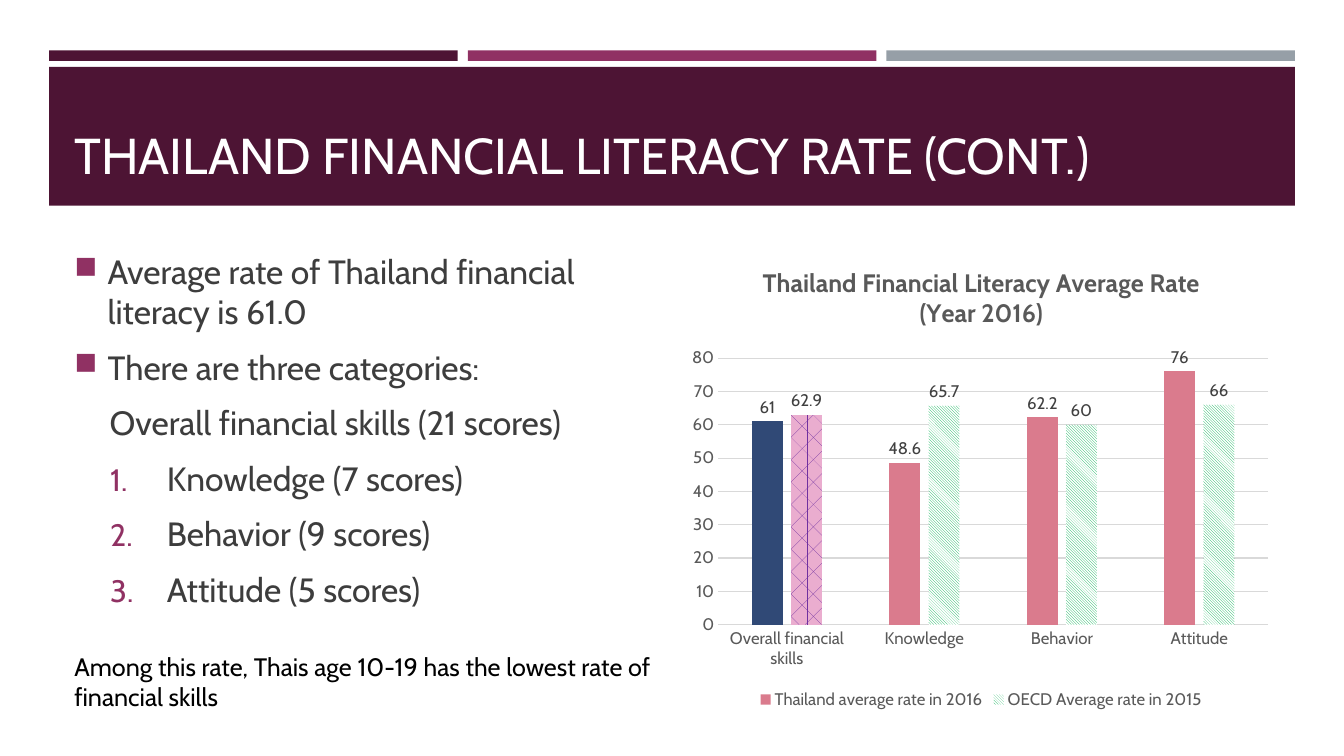
import pptx
import pptx.chart.data
import pptx.dml.color
import pptx.enum.chart
import pptx.enum.dml
import pptx.enum.shapes
import pptx.enum.text
import pptx.oxml
import pptx.oxml.ns
import pptx.util
from pptx.util import Pt

FONT = "Cabin"
PLUM, MAGENTA, GREY = "4D1434", "903163", "969FA7"
CHART_GREY, RULE_GREY = "595959", "D9D9D9"


def color(value):
    return pptx.dml.color.RGBColor.from_string(value)


def format_font(font, size, value, bold=False):
    font.name = FONT
    font.size = Pt(size)
    font.bold = bold
    font.color.rgb = color(value)


def format_runs(paragraph, size, value):
    for run in paragraph.runs:
        format_font(run.font, size, value)


def add_bar(slide, left, top, width, height, fill):
    shape = slide.shapes.add_shape(
        pptx.enum.shapes.MSO_SHAPE.RECTANGLE, Pt(left), Pt(top), Pt(width), Pt(height))
    shape.shadow.inherit = False
    shape.fill.solid()
    shape.fill.fore_color.rgb = color(fill)
    shape.line.fill.background()


def add_text_box(slide, left, top, width, height):
    text_frame = slide.shapes.add_textbox(Pt(left), Pt(top), Pt(width), Pt(height)).text_frame
    text_frame.word_wrap = True
    return text_frame


def add_header(slide, left, top, width):
    # Three thin stripes above the title band
    gap = 7.2
    stripe = (width - 2 * gap) / 3
    for index, fill in enumerate((PLUM, MAGENTA, GREY)):
        add_bar(slide, left + index * (stripe + gap), top, stripe, 7.5, fill)
    add_bar(slide, left, top + 11.8, width, 99.2, PLUM)

    # Title, drawn over the band
    title = slide.shapes.title
    title.left, title.top = Pt(left + 10.8), Pt(top + 21.6)
    title.width, title.height = Pt(width - 21.6), Pt(77.8)
    slide.shapes._spTree.append(title._element)
    text_frame = title.text_frame
    text_frame.text = "THAILAND FINANCIAL LITERACY RATE (CONT.)"
    text_frame.vertical_anchor = pptx.enum.text.MSO_ANCHOR.BOTTOM
    paragraph = text_frame.paragraphs[0]
    paragraph.alignment = pptx.enum.text.PP_ALIGN.LEFT
    format_runs(paragraph, 36, "FFFFFF")


def set_bullet(paragraph, margin, indent, bullet):
    properties = paragraph._p.get_or_add_pPr()
    properties.set("marL", str(Pt(margin)))
    properties.set("indent", str(Pt(indent)))
    if bullet is None:
        parts = ["<a:buNone {}/>"]
    else:
        parts = ['<a:buClr {}><a:srgbClr val="' + MAGENTA + '"/></a:buClr>',
                 '<a:buSzPct {} val="92000"/>', bullet]
    for part in parts:
        properties.append(pptx.oxml.parse_xml(part.format(pptx.oxml.ns.nsdecls("a"))))


def add_points(slide, left, top, width, height):
    square = (23.8, -23.8, '<a:buChar {} char="■"/>')
    plain = (25.2, 0, None)
    number = (66.2, -40.5, '<a:buAutoNum {} type="arabicPeriod"/>')
    points = [
        ("Average rate of Thailand financial literacy is 61.0", square),
        ("There are three categories:", square),
        ("Overall financial skills (21 scores)", plain),
        ("Knowledge (7 scores)", number),
        ("Behavior (9 scores)", number),
        ("Attitude (5 scores)", number),
    ]
    text_frame = add_text_box(slide, left, top, width, height)
    for index, (text, style) in enumerate(points):
        paragraph = text_frame.add_paragraph() if index else text_frame.paragraphs[0]
        paragraph.text = text
        paragraph.space_before = Pt(4.8 if index else 0)
        paragraph.space_after = Pt(6)
        set_bullet(paragraph, *style)
        format_runs(paragraph, 24, "3D3D3D")


def add_remark(slide, left, top, width, height):
    text_frame = add_text_box(slide, left, top, width, height)
    text_frame.text = "Among this rate, Thais age 10-19 has the lowest rate of financial skills"
    format_runs(text_frame.paragraphs[0], 18, "000000")


def fill_solid(fill, value):
    fill.solid()
    fill.fore_color.rgb = color(value)


def fill_pattern(fill, pattern, front, back):
    fill.patterned()
    fill.pattern = pattern
    fill.fore_color.rgb = color(front)
    fill.back_color.rgb = color(back)


def place_plot(chart, left, top, width, height):
    plot_area = chart._chartSpace.chart.plotArea
    for layout in plot_area.findall(pptx.oxml.ns.qn("c:layout")):
        plot_area.remove(layout)
    values = {"layoutTarget": "inner", "xMode": "edge", "yMode": "edge",
              "x": left, "y": top, "w": width, "h": height}
    inner = "".join(f'<c:{name} val="{value}"/>' for name, value in values.items())
    plot_area.insert(0, pptx.oxml.parse_xml(
        f'<c:layout {pptx.oxml.ns.nsdecls("c")}>'
        f'<c:manualLayout>{inner}</c:manualLayout></c:layout>'))


def add_rate_chart(slide, left, top, width, height):
    data = pptx.chart.data.CategoryChartData()
    data.categories = ["Overall financial skills", "Knowledge", "Behavior", "Attitude"]
    data.add_series("Thailand average rate in 2016", (61, 48.6, 62.2, 76))
    data.add_series("OECD Average rate in 2015", (62.9, 65.7, 60, 66))
    chart = slide.shapes.add_chart(
        pptx.enum.chart.XL_CHART_TYPE.COLUMN_CLUSTERED,
        Pt(left), Pt(top), Pt(width), Pt(height), data).chart
    format_font(chart.font, 10, "000000")
    place_plot(chart, 0.06, 0.24, 0.92, 0.57)

    # Title and legend
    chart.has_title = True
    title_frame = chart.chart_title.text_frame
    title_frame.text = "Thailand Financial Literacy Average Rate (Year 2016)"
    format_font(title_frame.paragraphs[0].runs[0].font, 18, CHART_GREY, bold=True)
    chart.has_legend = True
    chart.legend.position = pptx.enum.chart.XL_LEGEND_POSITION.BOTTOM
    chart.legend.include_in_layout = False
    format_font(chart.legend.font, 12, CHART_GREY)

    # Axes
    for axis in (chart.category_axis, chart.value_axis):
        axis.major_tick_mark = pptx.enum.chart.XL_TICK_MARK.NONE
        axis.minor_tick_mark = pptx.enum.chart.XL_TICK_MARK.NONE
        format_font(axis.tick_labels.font, 12, CHART_GREY)
    value_axis = chart.value_axis
    value_axis.minimum_scale, value_axis.maximum_scale, value_axis.major_unit = 0, 80, 10
    value_axis.format.line.fill.background()
    for line in (chart.category_axis.format.line, value_axis.major_gridlines.format.line):
        line.color.rgb = color(RULE_GREY)
        line.width = Pt(0.75)

    # Columns and their labels
    plot = chart.plots[0]
    plot.gap_width, plot.overlap, plot.vary_by_categories = 219, -27, False
    for series in plot.series:
        series.invert_if_negative = False
        labels = series.data_labels
        labels.show_value = True
        labels.position = pptx.enum.chart.XL_LABEL_POSITION.OUTSIDE_END
        format_font(labels.font, 12, "404040")
    thailand, oecd = plot.series
    patterns = pptx.enum.dml.MSO_PATTERN
    fill_solid(thailand.format.fill, "DA7B8D")
    fill_solid(thailand.points[0].format.fill, "304976")
    fill_pattern(oecd.format.fill, patterns.DARK_DOWNWARD_DIAGONAL, "00B050", "FFFFFF")
    fill_pattern(oecd.points[0].format.fill, patterns.DIVOT, "7030A0", "EAADCF")


def main():
    presentation = pptx.Presentation()
    presentation.slide_width, presentation.slide_height = Pt(960), Pt(540)
    slide = presentation.slides.add_slide(presentation.slide_layouts[5])
    add_header(slide, 35.2, 36, 889.8)
    add_points(slide, 46, 175.7, 427, 285.8)
    add_rate_chart(slide, 487.4, 175.7, 427, 334)
    add_remark(slide, 46, 461.5, 427, 51)
    presentation.save("out.pptx")


if __name__ == "__main__":
    main()
